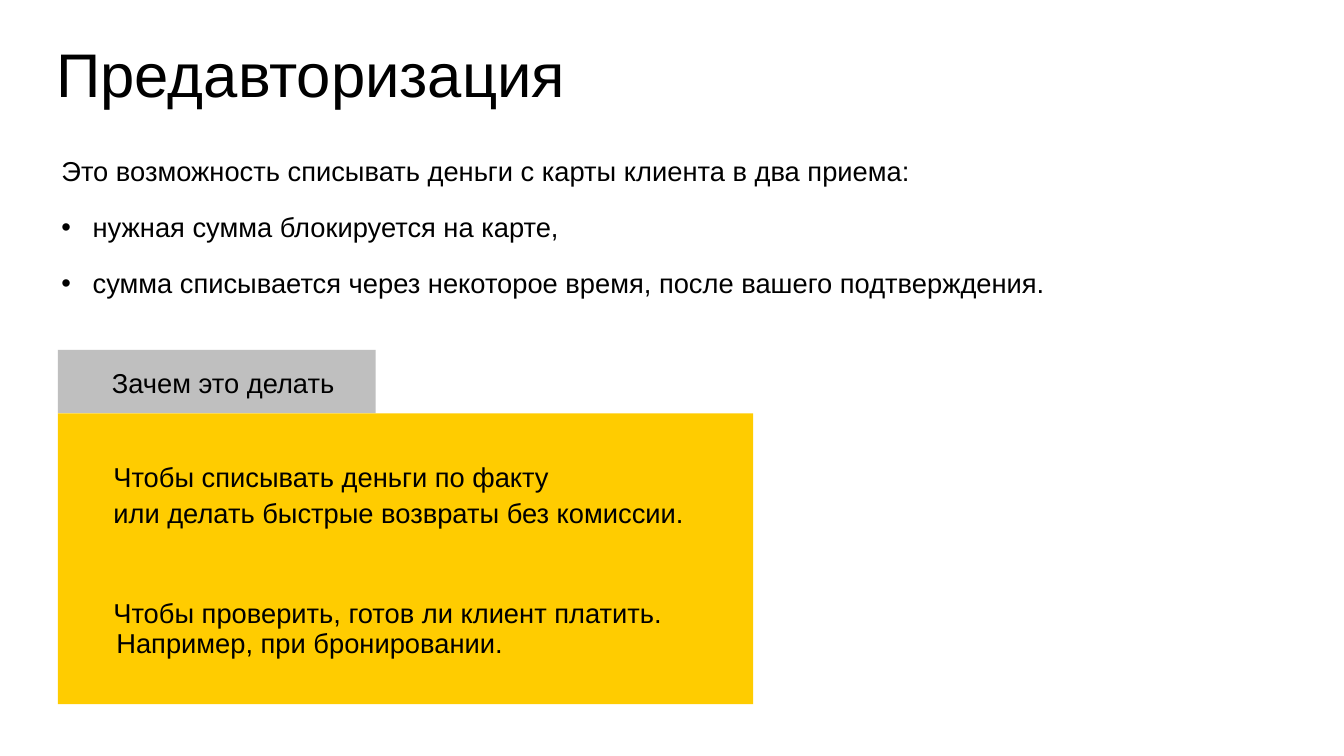
from pptx import Presentation
from pptx.dml.color import RGBColor
from pptx.enum.shapes import MSO_SHAPE
from pptx.enum.text import MSO_ANCHOR, MSO_AUTO_SIZE, PP_ALIGN
from pptx.oxml import parse_xml
from pptx.oxml.ns import nsdecls
from pptx.util import Inches, Pt

# Content: positions are left, top, width, height in inches
COLORS = {"text": "000000", "tab": "BFBFBF", "panel": "FFCC00"}
FONT = "Arial"
BODY_SIZE = 39

TITLE = "Предавторизация"
TITLE_BOX = (1.12, 0.74, 24.43, 1.66)

PANELS = [
    ("tab", (1.15, 6.94, 6.3, 1.26)),
    ("panel", (1.15, 8.2, 13.79, 5.77)),
]

INTRO_SPACING = {"spacing": Pt(60), "before": 10, "after": 10}
TEXT_BOXES = [
    ((1.12, 2.83, 20.97, 3.58), [
        {"lines": ["Это возможность списывать деньги с карты клиента в два приема:"],
         **INTRO_SPACING},
        {"lines": ["нужная сумма блокируется на карте,"],
         "bullet": True, **INTRO_SPACING},
        {"lines": ["сумма списывается через некоторое время, после вашего подтверждения."],
         "bullet": True, **INTRO_SPACING},
    ]),
    ((2.15, 9.02, 11.88, 3.58), [
        {"lines": ["Чтобы списывать деньги по факту",
                   "или делать быстрые возвраты без комиссии."], "spacing": 1.1},
        {"lines": ["Чтобы проверить, готов ли клиент платить."],
         "spacing": 2.0, "before": 49},
    ]),
    ((2.21, 12.37, 7.94, 0.76), [{"lines": ["Например, при бронировании."]}]),
    ((2.12, 7.16, 4.67, 0.82), [{"lines": ["Зачем это делать"], "spacing": 1.1}]),
]


def add_run(paragraph, text, size):
    run = paragraph.add_run()
    run.text = text
    run.font.name = FONT
    run.font.size = Pt(size)
    run.font.color.rgb = RGBColor.from_string(COLORS["text"])


def add_bullet(paragraph):
    properties = paragraph._p.get_or_add_pPr()
    properties.set("marL", str(Inches(0.62)))
    properties.set("indent", str(-Inches(0.62)))
    properties.append(parse_xml(f'<a:buFont {nsdecls("a")} typeface="{FONT}"/>'))
    properties.append(parse_xml(f'<a:buChar {nsdecls("a")} char="•"/>'))


def fill_paragraph(paragraph, content):
    paragraph.line_spacing = content.get("spacing", 1.0)
    paragraph.space_before = Pt(content.get("before", 0))
    paragraph.space_after = Pt(content.get("after", 0))
    if content.get("bullet"):
        add_bullet(paragraph)
    for index, line in enumerate(content["lines"]):
        if index:
            paragraph.add_line_break()
        add_run(paragraph, line, BODY_SIZE)


presentation = Presentation()
presentation.slide_width = Inches(26.66)
presentation.slide_height = Inches(15)
slide = presentation.slides.add_slide(presentation.slide_layouts[5])

# Title
title = slide.shapes.title
title.left, title.top, title.width, title.height = map(Inches, TITLE_BOX)
title_frame = title.text_frame
title_frame.auto_size = MSO_AUTO_SIZE.NONE
title_frame.vertical_anchor = MSO_ANCHOR.TOP
title_frame.margin_left = 0
title_paragraph = title_frame.paragraphs[0]
title_paragraph.alignment = PP_ALIGN.LEFT
title_paragraph.line_spacing = Pt(100)
add_run(title_paragraph, TITLE, 88)

# Coloured panels
for color, box in PANELS:
    shape = slide.shapes.add_shape(MSO_SHAPE.RECTANGLE, *map(Inches, box))
    shape.shadow.inherit = False
    shape.fill.solid()
    shape.fill.fore_color.rgb = RGBColor.from_string(COLORS[color])
    shape.line.fill.background()

# Body text
for box, contents in TEXT_BOXES:
    frame = slide.shapes.add_textbox(*map(Inches, box)).text_frame
    frame.word_wrap = True
    for index, content in enumerate(contents):
        paragraph = frame.add_paragraph() if index else frame.paragraphs[0]
        fill_paragraph(paragraph, content)

presentation.save("out.pptx")
